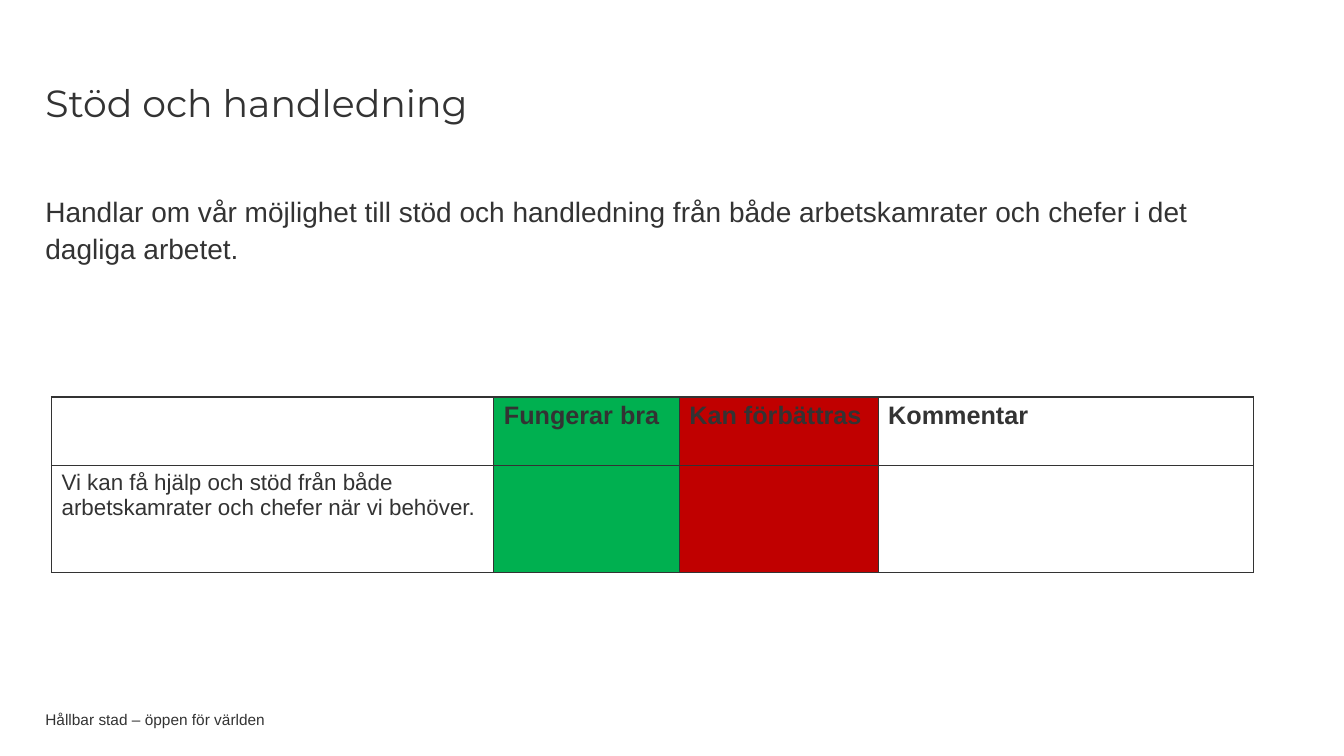
"""Builds a slide on support and supervision with a small assessment table."""
from dataclasses import dataclass

from lxml import etree
from pptx import Presentation
from pptx.dml.color import RGBColor
from pptx.enum import text
from pptx.oxml import ns
from pptx.util import Pt


@dataclass(frozen=True)
class Theme:
    ink: str = "333333"
    paper: str = "FFFFFF"
    good: str = "00B050"
    improve: str = "C00000"
    heading_font: str = "Montserrat"
    body_font: str = "Arial"
    title: int = 27
    body: int = 20
    header: int = 18
    cell: int = 16
    footer: int = 11
    border: int = 1


class SlideBuilder:
    def __init__(self, page, theme):
        self.page = page
        self.theme = theme

    def add_words(self, para, words, size, font=None, bold=False):
        span = para.add_run()
        span.text = words
        formats = {"name": font or self.theme.body_font, "size": Pt(size), "bold": bold}
        for name, value in formats.items():
            setattr(span.font, name, value)
        span.font.color.rgb = RGBColor.from_string(self.theme.ink)

    def text_box(self, frame, words, size, font=None, anchor=text.MSO_ANCHOR.MIDDLE, spacing=1.0):
        box = self.page.shapes.add_textbox(*map(Pt, frame)).text_frame
        formats = {"word_wrap": True, "vertical_anchor": anchor, "margin_left": 0,
                   "margin_top": 0, "margin_right": 0, "margin_bottom": 0}
        for name, value in formats.items():
            setattr(box, name, value)
        para = box.paragraphs[0]
        para.line_spacing = spacing
        self.add_words(para, words, size, font)

    def borders(self, cell):
        properties = cell._tc.get_or_add_tcPr()
        for side in ("a:lnL", "a:lnR", "a:lnT", "a:lnB"):
            line = etree.SubElement(properties, ns.qn(side), w=str(Pt(self.theme.border)))
            fill = etree.SubElement(line, ns.qn("a:solidFill"))
            etree.SubElement(fill, ns.qn("a:srgbClr"), val=self.theme.ink)

    def table(self, left, top, widths, heights, rows, fills):
        frame = (left, top, sum(widths), sum(heights))
        table = self.page.shapes.add_table(len(rows), len(widths), *map(Pt, frame)).table
        for column, width in zip(table.columns, widths):
            column.width = Pt(width)
        for index, (height, labels) in enumerate(zip(heights, rows)):
            table.rows[index].height = Pt(height)
            header = index == 0
            size = self.theme.header if header else self.theme.cell
            for position, (words, color) in enumerate(zip(labels, fills)):
                cell = table.cell(index, position)
                self.borders(cell)
                cell.fill.solid()
                cell.fill.fore_color.rgb = RGBColor.from_string(color)
                if words:
                    self.add_words(cell.text_frame.paragraphs[0], words, size, bold=header)


def main():
    theme = Theme()
    deck = Presentation()
    deck.slide_width, deck.slide_height = Pt(960), Pt(540)
    slide = SlideBuilder(deck.slides.add_slide(deck.slide_layouts[6]), theme)

    slide.text_box((32.4, 508.3, 680, 11.5), "Hållbar stad – öppen för världen", theme.footer)
    slide.text_box((32.4, 53, 722, 40), "Stöd och handledning", theme.title, theme.heading_font)
    slide.text_box(
        (32.4, 136.8, 863, 329),
        "Handlar om vår möjlighet till stöd och handledning från både "
        "arbetskamrater och chefer i det dagliga arbetet.",
        theme.body, anchor=text.MSO_ANCHOR.TOP, spacing=1.1)
    slide.table(
        36.8, 283.6, (316, 132.5, 142, 268), (49, 76.3),
        (("", "Fungerar bra", "Kan förbättras", "Kommentar"),
         ("Vi kan få hjälp och stöd från både arbetskamrater och chefer när vi behöver.", "", "", "")),
        (theme.paper, theme.good, theme.improve, theme.paper))
    deck.save("out.pptx")


if __name__ == "__main__":
    main()
